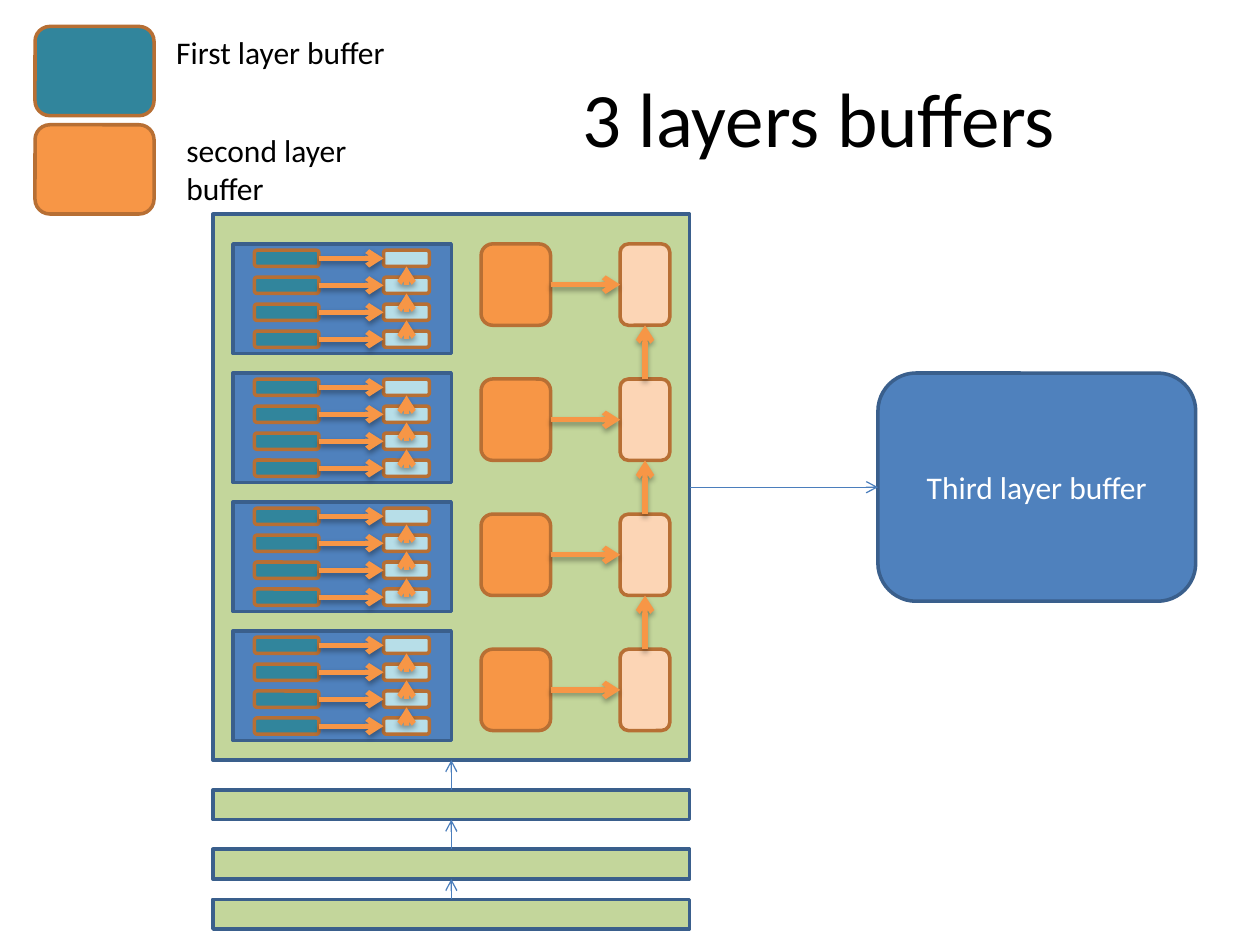
from pptx import Presentation
from pptx.dml.color import RGBColor
from pptx.enum.shapes import MSO_CONNECTOR, MSO_SHAPE
from pptx.enum.text import MSO_ANCHOR, PP_ALIGN
from pptx.oxml import parse_xml
from pptx.oxml.ns import nsdecls, qn
from pptx.util import Pt

RECTANGLE = MSO_SHAPE.RECTANGLE
ROUNDED = MSO_SHAPE.ROUNDED_RECTANGLE
STRAIGHT = MSO_CONNECTOR.STRAIGHT
TOP, LEFT, BOTTOM, RIGHT = range(4)

FONT = "Calibri"
COLORS = {
    "black": "000000",
    "white": "FFFFFF",
    "teal": "31859C",
    "light teal": "B7DEE8",
    "orange": "F79646",
    "light orange": "FCD5B5",
    "orange border": "B76F34",
    "blue": "4F81BD",
    "blue border": "3A5F8C",
    "blue arrow": "4B7EBC",
    "green": "C3D69B",
}

# Boxes are left, top, width, height in points.
TITLE = ("3 layers buffers", (252, 21.6, 432, 90))
LEGEND = [
    ("First layer buffer", (93.6, 15.1, 147.6, 29), "teal", (20, 15.1, 68, 51)),
    ("second layer buffer", (99.4, 71.3, 147.6, 51), "orange", (20, 71.3, 68, 51)),
]
THIRD_LAYER = ("Third layer buffer", (501.7, 213.2, 181.6, 130.4))
MODULE = (121.7, 122.4, 272.4, 312)
MODULE_STRIP_TOPS = [451.4, 485.3, 513.9]
STRIP_HEIGHT = 17

ROWS = 4
PANEL = (133.1, 139.4, 124.8, 62.7)
PANEL_PITCH = 73.7
# Each grid: left box, right box, row pitch, fills of both boxes.
SECOND_GRID = ((274.9, 139.4, 39.7, 46.5), (354.4, 139.4, 28.4, 46.5), 77.2,
               ("orange", "light orange"))
FIRST_GRID = ((145.4, 143, 36.9, 9.3), (219.2, 143, 26.2, 9.3), 15.4,
              ("teal", "light teal"))

SHADOW = (
    f'<a:effectLst {nsdecls("a")}><a:outerShdw blurRad="40000" dist="23000" '
    'dir="5400000" rotWithShape="0"><a:srgbClr val="000000">'
    '<a:alpha val="35000"/></a:srgbClr></a:outerShdw></a:effectLst>'
)
NO_SHADOW = f'<a:effectLst {nsdecls("a")}/>'
ARROWHEAD = f'<a:tailEnd {nsdecls("a")} type="arrow"/>'


def color(name):
    return RGBColor.from_string(COLORS[name])


def shifted(box, distance):
    """Move a box down by a distance in points."""
    left, top, width, height = box
    return left, top + distance, width, height


def write(shape, text, size, color_name, alignment, anchor):
    frame = shape.text_frame
    frame.word_wrap = True
    frame.vertical_anchor = anchor
    paragraph = frame.paragraphs[0]
    paragraph.alignment = alignment
    run = paragraph.add_run()
    run.text = text
    run.font.name = FONT
    run.font.size = Pt(size)
    run.font.color.rgb = color(color_name)


def add_text(shapes, box, *text_style):
    write(shapes.add_textbox(*map(Pt, box)), *text_style)


def add_box(shapes, kind, box, fill, border):
    shape = shapes.add_shape(kind, *map(Pt, box))
    shape.shadow.inherit = False
    shape.fill.solid()
    shape.fill.fore_color.rgb = color(fill)
    shape.line.color.rgb = color(border)
    shape.line.width = Pt(2)
    return shape


def add_arrow(shapes, start, start_side, end, end_side,
              color_name="blue arrow", width=0.75, effects=NO_SHADOW):
    arrow = shapes.add_connector(STRAIGHT, 0, 0, 0, 0)
    arrow.begin_connect(start, start_side)
    arrow.end_connect(end, end_side)
    arrow.line.color.rgb = color(color_name)
    arrow.line.width = Pt(width)
    properties = arrow._element.spPr
    properties.find(qn("a:ln")).append(parse_xml(ARROWHEAD))
    properties.append(parse_xml(effects))


def add_buffer_grid(shapes, grid, offset=0):
    """Draw rows of buffer and output, with the outputs chained upward."""
    left_box, right_box, pitch, (left_fill, right_fill) = grid
    rows = []
    for row in range(ROWS):
        distance = offset + row * pitch
        rows.append((
            add_box(shapes, ROUNDED, shifted(left_box, distance),
                    left_fill, "orange border"),
            add_box(shapes, ROUNDED, shifted(right_box, distance),
                    right_fill, "orange border"),
        ))
    style = ("orange", 3, SHADOW)
    for buffer, output in rows:
        add_arrow(shapes, buffer, RIGHT, output, LEFT, *style)
    for (_, upper), (_, lower) in zip(rows, rows[1:]):
        add_arrow(shapes, lower, TOP, upper, BOTTOM, *style)


def add_module(shapes):
    module = add_box(shapes, RECTANGLE, MODULE, "green", "blue border")
    add_buffer_grid(shapes, SECOND_GRID)
    for row in range(ROWS):
        offset = row * PANEL_PITCH
        add_box(shapes, RECTANGLE, shifted(PANEL, offset), "blue", "blue border")
        add_buffer_grid(shapes, FIRST_GRID, offset)
    return module


def main():
    presentation = Presentation()
    presentation.slide_width = Pt(720)
    presentation.slide_height = Pt(540)
    slide = presentation.slides.add_slide(presentation.slide_layouts[6])
    shapes = slide.shapes

    title, title_box = TITLE
    add_text(shapes, title_box, title, 44, "black", PP_ALIGN.CENTER, MSO_ANCHOR.MIDDLE)
    for label, label_box, fill, key_box in LEGEND:
        add_text(shapes, label_box, label, 18, "black", PP_ALIGN.LEFT, MSO_ANCHOR.TOP)
        add_box(shapes, ROUNDED, key_box, fill, "orange border")

    module = add_module(shapes.add_group_shape().shapes)
    left, _, width, _ = MODULE
    above = module
    for top in MODULE_STRIP_TOPS:
        strip = add_box(shapes, RECTANGLE, (left, top, width, STRIP_HEIGHT),
                        "green", "blue border")
        add_arrow(shapes, strip, TOP, above, BOTTOM)
        above = strip

    label, box = THIRD_LAYER
    third_layer = add_box(shapes, ROUNDED, box, "blue", "blue border")
    write(third_layer, label, 18, "white", PP_ALIGN.CENTER, MSO_ANCHOR.MIDDLE)
    add_arrow(shapes, module, RIGHT, third_layer, LEFT)

    presentation.save("out.pptx")


if __name__ == "__main__":
    main()
